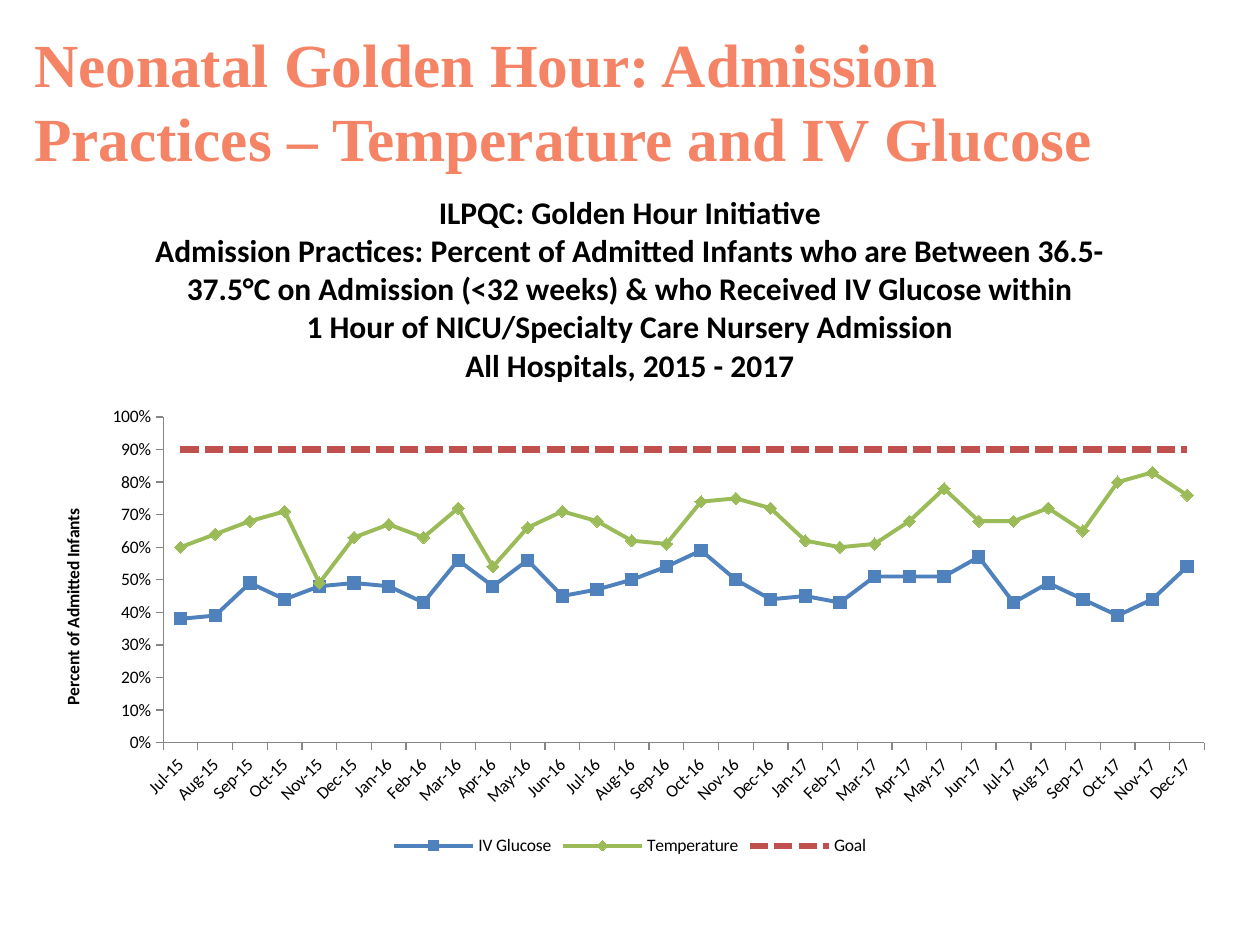
from dataclasses import dataclass
from typing import Optional

from lxml.etree import SubElement
from pptx import Presentation
from pptx.chart.data import CategoryChartData
from pptx.dml.color import RGBColor as Rgb
from pptx.enum.chart import XL_CHART_TYPE as Kind
from pptx.enum.chart import XL_LEGEND_POSITION as Spot
from pptx.enum.chart import XL_MARKER_STYLE as Mark
from pptx.enum.chart import XL_TICK_MARK as Tick
from pptx.enum.dml import MSO_LINE as Dash
from pptx.enum.text import MSO_ANCHOR as Anchor
from pptx.enum.text import MSO_AUTO_SIZE as Fit
from pptx.enum.text import PP_ALIGN as Align
from pptx.oxml.ns import qn
from pptx.util import Inches, Pt


@dataclass(frozen=True)
class Theme:
    """Colours, fonts and type sizes of the slide."""
    coral: str = "F58466"
    black: str = "000000"
    gray: str = "868686"
    blue: str = "4F81BD"
    green: str = "9BBB59"
    red: str = "C0504D"
    serif: str = "Times New Roman"
    sans: str = "Calibri"
    head: float = 35
    title: float = 18
    small: float = 10


@dataclass(frozen=True)
class Trend:
    """One line of the chart, with values in percent."""
    name: str
    vals: list[int]
    color: str
    mark: Mark
    width: float = 2.25
    dash: Optional[Dash] = None


THEME = Theme()
NAMES = "Jan Feb Mar Apr May Jun Jul Aug Sep Oct Nov Dec".split()
MONTHS = [f"{NAMES[n % 12]}-{15 + n // 12}" for n in range(6, 36)]
TRENDS = [
    Trend("IV Glucose",
          [38, 39, 49, 44, 48, 49, 48, 43, 56, 48, 56, 45, 47, 50, 54,
           59, 50, 44, 45, 43, 51, 51, 51, 57, 43, 49, 44, 39, 44, 54],
          THEME.blue, Mark.SQUARE),
    Trend("Temperature",
          [60, 64, 68, 71, 49, 63, 67, 63, 72, 54, 66, 71, 68, 62, 61,
           74, 75, 72, 62, 60, 61, 68, 78, 68, 68, 72, 65, 80, 83, 76],
          THEME.green, Mark.DIAMOND),
    Trend("Goal", [90] * len(MONTHS), THEME.red, Mark.NONE, 3.5,
          Dash.SQUARE_DOT),
]
HEAD = "Neonatal Golden Hour: Admission Practices – Temperature and IV Glucose"
TITLE = """ILPQC: Golden Hour Initiative
Admission Practices: Percent of Admitted Infants who are Between 36.5-37.5°C \
on Admission (<32 weeks) & who Received IV Glucose within
1 Hour of NICU/Specialty Care Nursery Admission
All Hospitals, 2015 - 2017"""


def write(frame, text: str, *, size: float, color: str = THEME.black,
          face: str = THEME.sans, bold: bool = True,
          align: Optional[Align] = None) -> None:
    """Fill a text frame with one paragraph per line of text."""
    for i, line in enumerate(text.split("\n")):
        para = frame.add_paragraph() if i else frame.paragraphs[0]
        if align is not None:
            para.alignment = align
        run = para.add_run()
        run.text = line
        font = run.font
        font.size, font.bold, font.name = Pt(size), bold, face
        font.color.rgb = Rgb.from_string(color)


def place(chart, **box: float) -> None:
    """Fix the inner plot area as fractions of the chart."""
    area = chart._chartSpace.chart.plotArea
    for old in area.findall(qn("c:layout")):
        area.remove(old)
    layout = area.makeelement(qn("c:layout"))
    area.insert(0, layout)
    manual = SubElement(layout, qn("c:manualLayout"))
    rules = {"layoutTarget": "inner", "xMode": "edge", "yMode": "edge"} | box
    for tag, val in rules.items():
        SubElement(manual, qn(f"c:{tag}")).set("val", str(val))


def style(line, trend: Trend) -> None:
    """Format one chart series."""
    color = Rgb.from_string(trend.color)
    line.smooth = False
    line.format.line.color.rgb = color
    line.format.line.width = Pt(trend.width)
    if trend.dash is not None:
        line.format.line.dash_style = trend.dash
    line.marker.style = trend.mark
    if trend.mark != Mark.NONE:
        line.marker.size = 7
        line.marker.format.fill.solid()
        line.marker.format.fill.fore_color.rgb = color
        line.marker.format.line.color.rgb = color


def draw(slide, trends: list[Trend]) -> None:
    """Add the line chart of admission practices."""
    data = CategoryChartData(number_format="0%")
    data.categories = MONTHS
    for trend in trends:
        data.add_series(trend.name, [v / 100 for v in trend.vals])
    chart = slide.shapes.add_chart(
        Kind.LINE_MARKERS, Inches(0.25), Inches(1.33), Inches(9.5),
        Inches(5.5), data).chart
    chart.font.name, chart.font.size = THEME.sans, Pt(THEME.small)
    chart.font.color.rgb = Rgb.from_string(THEME.black)
    write(chart.chart_title.text_frame, TITLE, size=THEME.title)
    chart.chart_title.include_in_layout = False
    chart.has_legend = True
    chart.legend.position = Spot.BOTTOM
    chart.legend.include_in_layout = False
    chart.plots[0].vary_by_categories = False
    for line, trend in zip(chart.plots[0].series, trends):
        style(line, trend)
    months, share = chart.category_axis, chart.value_axis
    for axis in (months, share):
        axis.has_major_gridlines = False
        axis.major_tick_mark = Tick.OUTSIDE
        axis.format.line.color.rgb = Rgb.from_string(THEME.gray)
        axis.format.line.width = Pt(0.75)
    months.tick_labels.font.size = Pt(THEME.small)
    months._element.find(qn("c:txPr")).find(qn("a:bodyPr")).set(
        "rot", "-2700000")
    share.minimum_scale, share.maximum_scale, share.major_unit = 0, 1, 0.1
    share.tick_labels.number_format = "0%"
    share.tick_labels.number_format_is_linked = False
    write(share.axis_title.text_frame, "Percent of Admitted Infants",
          size=THEME.small)
    place(chart, x=0.11, y=0.36, w=0.87, h=0.47)


def main() -> None:
    """Build and save the slide."""
    deck = Presentation()
    deck.slide_width, deck.slide_height = Inches(10), Inches(7.5)
    slide = deck.slides.add_slide(deck.slide_layouts[5])
    head = slide.shapes.title
    head.left, head.top = Inches(0.17), Inches(0.17)
    head.width, head.height = Inches(9), Inches(1.25)
    frame = head.text_frame
    frame.word_wrap, frame.auto_size = True, Fit.NONE
    frame.vertical_anchor = Anchor.MIDDLE
    write(frame, HEAD, size=THEME.head, color=THEME.coral, face=THEME.serif,
          align=Align.LEFT)
    draw(slide, TRENDS)
    deck.save("out.pptx")


if __name__ == "__main__":
    main()
